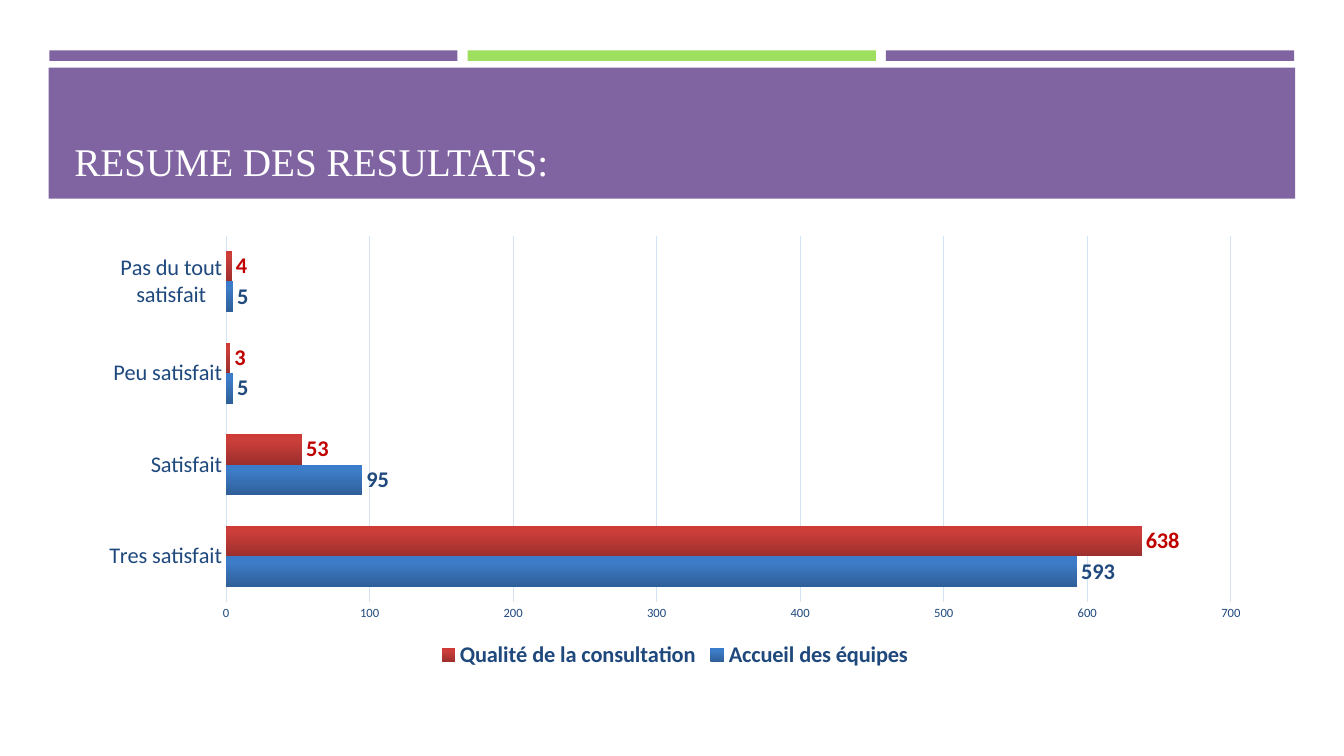
from lxml import etree
from pptx import Presentation
from pptx.chart.data import CategoryChartData
from pptx.dml.color import RGBColor
from pptx.enum.chart import XL_CHART_TYPE as ChartType
from pptx.enum.chart import XL_LABEL_POSITION as LabelPosition
from pptx.enum.chart import XL_LEGEND_POSITION as LegendPosition
from pptx.enum.chart import XL_TICK_MARK as TickMark
from pptx.enum.shapes import MSO_SHAPE as Shape
from pptx.enum.text import MSO_ANCHOR as Anchor
from pptx.oxml.ns import qn
from pptx.util import Pt

PURPLE = RGBColor(0x80, 0x64, 0xA2)
GREEN = RGBColor(0x9F, 0xDF, 0x5F)
WHITE = RGBColor(0xFF, 0xFF, 0xFF)
NAVY = RGBColor(0x1F, 0x49, 0x7D)
RED = RGBColor(0xC0, 0x00, 0x00)
PALE_BLUE = RGBColor(0xD4, 0xE3, 0xF4)
BLUE_STOPS = ((0, RGBColor(0x2F, 0x5F, 0x99)), (80, RGBColor(0x3D, 0x7C, 0xC7)),
              (100, RGBColor(0x3A, 0x7C, 0xCB)))
RED_STOPS = ((0, RGBColor(0x9C, 0x2F, 0x2D)), (80, RGBColor(0xCB, 0x3E, 0x3A)),
             (100, RGBColor(0xCE, 0x3B, 0x37)))

RATINGS = ("Tres satisfait", "Satisfait", "Peu satisfait", "Pas du tout satisfait")
SURVEY = (
    ("Accueil des équipes", (593, 95, 5, 5), BLUE_STOPS, NAVY),
    ("Qualité de la consultation", (638, 53, 3, 4), RED_STOPS, RED),
)


def style_font(font, name="Calibri", size=16, color=NAVY, bold=False):
    font.name = name
    font.size = Pt(size)
    font.bold = bold
    font.color.rgb = color


def write_text(frame, text, anchor=Anchor.BOTTOM, **font_format):
    frame.word_wrap = True
    frame.vertical_anchor = anchor
    span = frame.paragraphs[0].add_run()
    span.text = text
    style_font(span.font, **font_format)


def fill_upward(series, stops):
    properties = series._element.get_or_add_spPr()
    gradient = etree.SubElement(properties, qn("a:gradFill"), rotWithShape="1")
    stop_list = etree.SubElement(gradient, qn("a:gsLst"))
    for percent, color in stops:
        stop = etree.SubElement(stop_list, qn("a:gs"), pos=str(percent * 1000))
        etree.SubElement(stop, qn("a:srgbClr"), val=str(color))
    etree.SubElement(gradient, qn("a:lin"), ang=str(270 * 60000), scaled="0")


class SlideBuilder:
    def __init__(self, page):
        self.page = page

    def band(self, left, top, width, height, color):
        box = self.page.shapes.add_shape(
            Shape.RECTANGLE, Pt(left), Pt(top), Pt(width), Pt(height))
        box.shadow.inherit = False
        box.fill.solid()
        box.fill.fore_color.rgb = color
        box.line.fill.background()

    def title(self, left, top, width, height, text):
        box = self.page.shapes.add_textbox(Pt(left), Pt(top), Pt(width), Pt(height))
        write_text(box.text_frame, text, name="Times New Roman", size=28, color=WHITE)

    def bar_chart(self, left, top, width, height):
        data = CategoryChartData()
        data.categories = RATINGS
        for name, values, _, _ in SURVEY:
            data.add_series(name, values)
        chart = self.page.shapes.add_chart(
            ChartType.BAR_CLUSTERED, Pt(left), Pt(top), Pt(width), Pt(height), data).chart
        chart.has_title = False
        chart.font.name = "Calibri"
        chart.font.size = Pt(10)
        chart.has_legend = True
        chart.legend.position = LegendPosition.BOTTOM
        chart.legend.include_in_layout = False
        style_font(chart.legend.font, bold=True)
        self.style_axes(chart)
        self.style_bars(chart.plots[0])

    def style_axes(self, chart):
        for axis, size in ((chart.category_axis, 16), (chart.value_axis, 9)):
            axis.major_tick_mark = TickMark.NONE
            axis.minor_tick_mark = TickMark.NONE
            style_font(axis.tick_labels.font, size=size)
        chart.value_axis.has_major_gridlines = True
        chart.value_axis.format.line.fill.background()
        for lined in (chart.category_axis, chart.value_axis.major_gridlines):
            lined.format.line.color.rgb = PALE_BLUE
            lined.format.line.width = Pt(0.75)

    def style_bars(self, plot):
        plot.gap_width = 100
        plot.vary_by_categories = False
        for series, (_, _, stops, label_color) in zip(plot.series, SURVEY):
            fill_upward(series, stops)
            labels = series.data_labels
            labels.show_value = True
            labels.position = LabelPosition.OUTSIDE_END
            style_font(labels.font, color=label_color, bold=True)


def main():
    deck = Presentation()
    deck.slide_width, deck.slide_height = Pt(960), Pt(540)
    slide = SlideBuilder(deck.slides.add_slide(deck.slide_layouts[6]))
    for column, color in enumerate((PURPLE, GREEN, PURPLE)):
        slide.band(35.2 + column * 298.8, 36, 291.6, 7.5, color)
    slide.band(34.8, 48.4, 890.4, 93.6, PURPLE)
    slide.title(46.1, 55.4, 868.3, 79.9, "RESUME DES RESULTATS:")
    slide.bar_chart(61.2, 162, 841.7, 319)
    deck.save("out.pptx")


if __name__ == "__main__":
    main()
